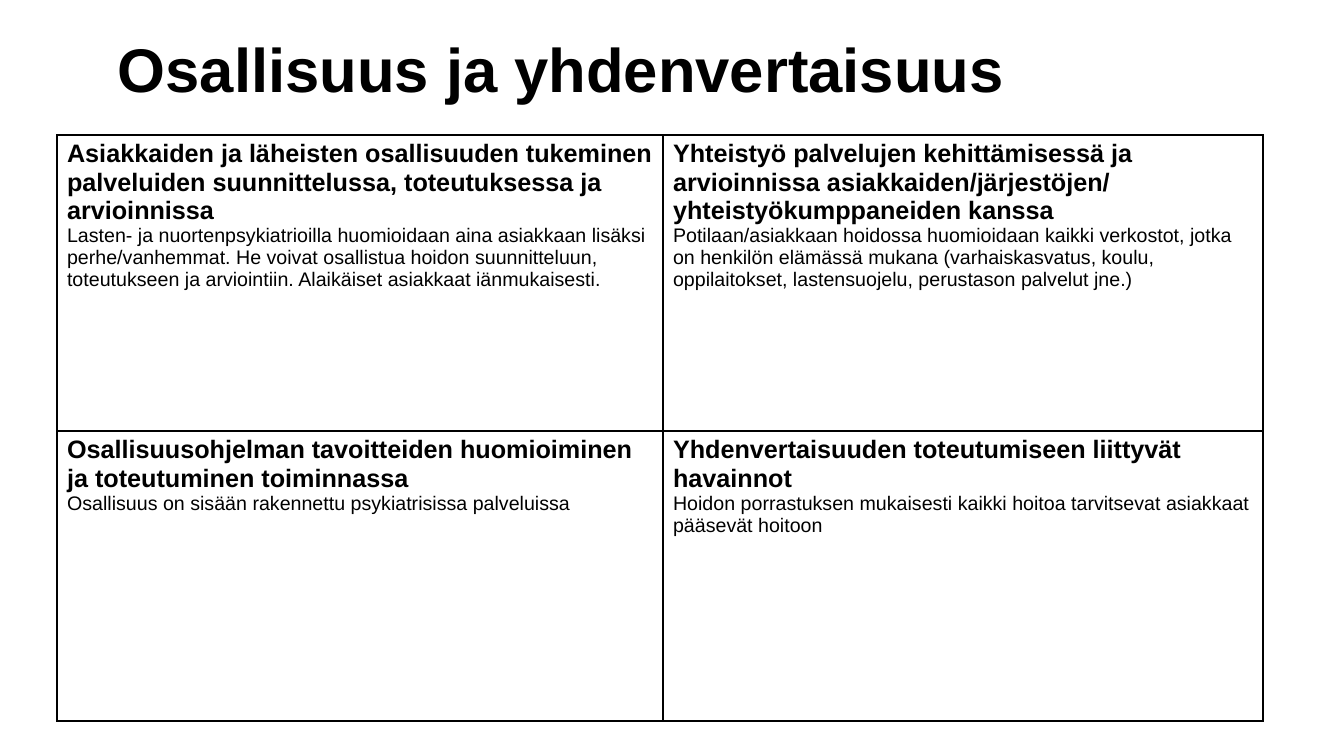
"""Build a slide with a title and a two-by-two table on inclusion and equality."""
from dataclasses import dataclass

import pptx
import pptx.dml.color
import pptx.enum.text
import pptx.oxml
import pptx.oxml.ns
import pptx.presentation
import pptx.slide
import pptx.table
import pptx.text.text
import pptx.util

SCALE = 914400 / 100.8
BLACK = pptx.dml.color.RGBColor(0, 0, 0)
WHITE = pptx.dml.color.RGBColor(255, 255, 255)
FONT = "Arial"
COLS = (606, 600)
ROWS = (296, 290)


@dataclass(frozen=True)
class Topic:
    row: int
    col: int
    head: str
    body: str


TOPICS = (
    Topic(
        0, 0,
        "Asiakkaiden ja läheisten osallisuuden tukeminen palveluiden "
        "suunnittelussa, toteutuksessa ja arvioinnissa",
        "Lasten- ja nuortenpsykiatrioilla huomioidaan aina asiakkaan lisäksi "
        "perhe/vanhemmat. He voivat osallistua hoidon suunnitteluun, "
        "toteutukseen ja arviointiin. Alaikäiset asiakkaat iänmukaisesti.",
    ),
    Topic(
        0, 1,
        "Yhteistyö palvelujen kehittämisessä ja arvioinnissa "
        "asiakkaiden/järjestöjen/ yhteistyökumppaneiden kanssa",
        "Potilaan/asiakkaan hoidossa huomioidaan kaikki verkostot, jotka on "
        "henkilön elämässä mukana (varhaiskasvatus, koulu, oppilaitokset, "
        "lastensuojelu, perustason palvelut jne.)",
    ),
    Topic(
        1, 0,
        "Osallisuusohjelman tavoitteiden huomioiminen ja toteutuminen "
        "toiminnassa",
        "Osallisuus on sisään rakennettu psykiatrisissa palveluissa",
    ),
    Topic(
        1, 1,
        "Yhdenvertaisuuden toteutumiseen liittyvät havainnot",
        "Hoidon porrastuksen mukaisesti kaikki hoitoa tarvitsevat asiakkaat "
        "pääsevät hoitoon",
    ),
)


def px(count: int) -> pptx.util.Emu:
    """Turn whole pixels into EMU."""
    return pptx.util.Emu(round(count * SCALE))


def write(para: pptx.text.text._Paragraph, text: str, *, size: int,
          bold: bool = False, space: float = 1.0) -> None:
    """Put formatted text into a paragraph."""
    para.line_spacing = space
    run = para.add_run()
    run.text = text
    run.font.name = FONT
    run.font.size = pptx.util.Pt(size)
    run.font.bold = bold
    run.font.color.rgb = BLACK


def border(cell: pptx.table._Cell) -> None:
    """Draw a thin black line on each side of a cell."""
    props = cell._tc.get_or_add_tcPr()
    for side in ("lnL", "lnR", "lnT", "lnB"):
        props.append(pptx.oxml.parse_xml(
            f'<a:{side} {pptx.oxml.ns.nsdecls("a")} w="{pptx.util.Pt(1)}">'
            f'<a:solidFill><a:srgbClr val="{BLACK}"/></a:solidFill></a:{side}>'
        ))


def fill(table: pptx.table.Table, topic: Topic) -> None:
    """Write one topic into its cell."""
    cell = table.cell(topic.row, topic.col)
    border(cell)
    cell.fill.solid()
    cell.fill.fore_color.rgb = WHITE
    frame = cell.text_frame
    write(frame.paragraphs[0], topic.head, size=18, bold=True)
    write(frame.add_paragraph(), topic.body, size=14)


def add_title(slide: pptx.slide.Slide) -> None:
    """Add the slide title."""
    box = slide.shapes.add_textbox(px(108), px(22), px(968), px(101))
    frame = box.text_frame
    frame.word_wrap = True
    frame.vertical_anchor = pptx.enum.text.MSO_ANCHOR.MIDDLE
    write(frame.paragraphs[0], "Osallisuus ja yhdenvertaisuus",
          size=44, bold=True, space=0.9)


def add_grid(slide: pptx.slide.Slide) -> None:
    """Add the table of topics."""
    shape = slide.shapes.add_table(len(ROWS), len(COLS), px(57), px(135),
                                   px(sum(COLS)), px(sum(ROWS)))
    table = shape.table
    table.first_row = False
    table.horz_banding = False
    for col, width in zip(table.columns, COLS):
        col.width = px(width)
    for row, height in zip(table.rows, ROWS):
        row.height = px(height)
    for topic in TOPICS:
        fill(table, topic)


def main() -> None:
    """Build and save the deck."""
    deck = pptx.Presentation()
    deck.slide_width, deck.slide_height = px(1344), px(756)
    slide = deck.slides.add_slide(deck.slide_layouts[6])
    add_title(slide)
    add_grid(slide)
    deck.save("out.pptx")


if __name__ == "__main__":
    main()
